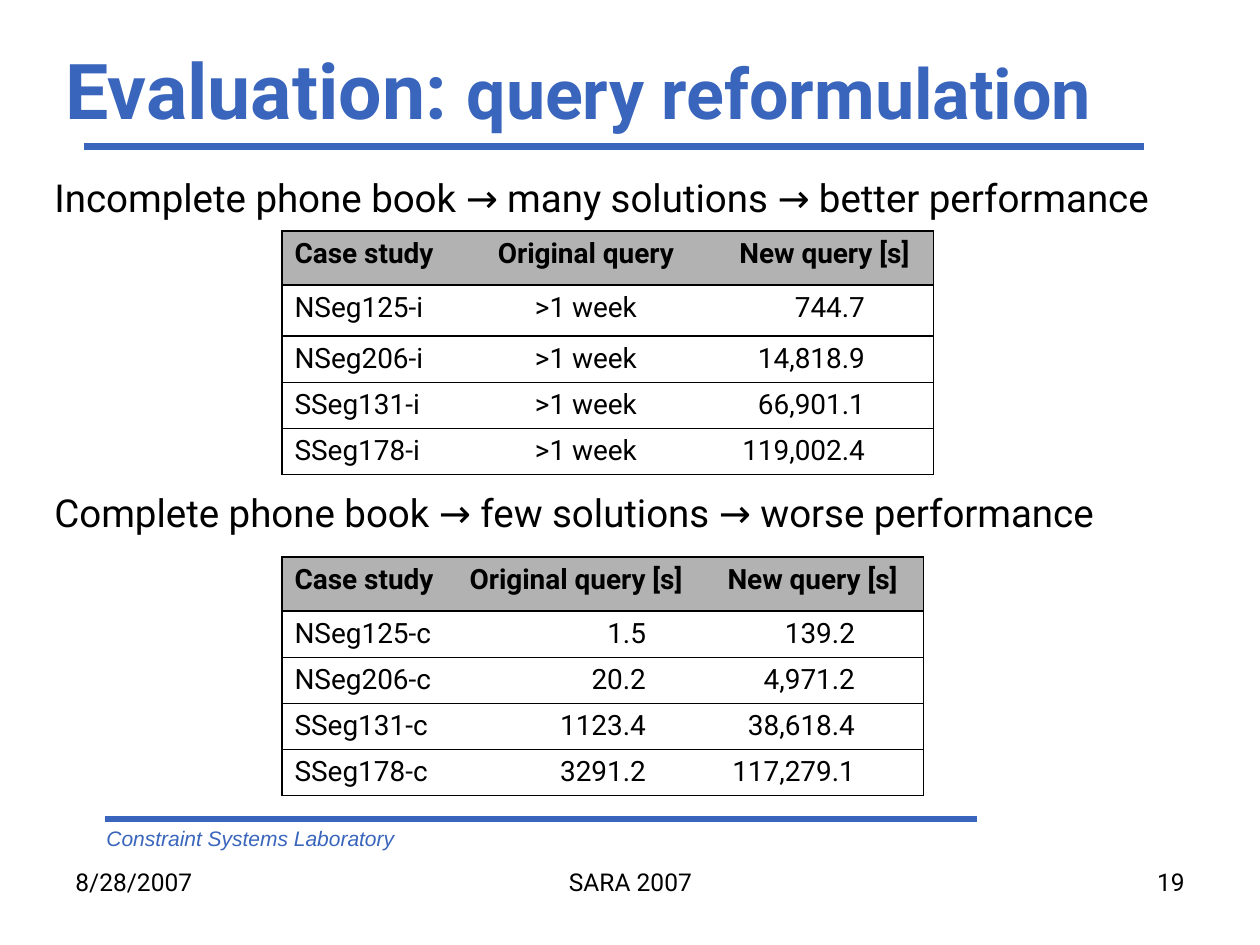
import pptx
import pptx.dml.color
import pptx.enum.shapes
import pptx.enum.text
import pptx.oxml
import pptx.oxml.ns
import pptx.util

PX = 914400 / 126
COLORS = {"blue": "3A65BC", "black": "000000", "header": "B2B2B2"}
ALIGN = {
    "l": pptx.enum.text.PP_ALIGN.LEFT,
    "c": pptx.enum.text.PP_ALIGN.CENTER,
    "r": pptx.enum.text.PP_ALIGN.RIGHT,
}


def px(n):
    return pptx.util.Emu(round(n * PX))


def rgb(name):
    return pptx.dml.color.RGBColor.from_string(COLORS[name])


class SlideBuilder:
    """Draws styled elements on one slide, with lengths in px."""

    def __init__(self, slide, font="Roboto"):
        self.s = slide
        self.font = font

    def style(self, r, size, color="black", bold=False, italic=False, font=None):
        r.font.name = font or self.font
        r.font.size = pptx.util.Pt(size)
        r.font.bold = bold
        r.font.italic = italic
        r.font.color.rgb = rgb(color)

    def rule(self, x1, x2, y):
        sp = self.s.shapes.add_connector(
            pptx.enum.shapes.MSO_CONNECTOR.STRAIGHT, px(x1), px(y), px(x2), px(y))
        sp.line.color.rgb = rgb("blue")
        sp.line.width = pptx.util.Pt(4)
        pptx.oxml.ns.qn("a:effectLst")
        sp._element.spPr.append(pptx.oxml.parse_xml(
            f"<a:effectLst {pptx.oxml.ns.nsdecls('a')}/>"))

    def text(self, box, runs, align="l", wrap=True, middle=False, **look):
        tf = self.s.shapes.add_textbox(*map(px, box)).text_frame
        tf.word_wrap = wrap
        if middle:
            tf.vertical_anchor = pptx.enum.text.MSO_ANCHOR.MIDDLE
        p = tf.paragraphs[0]
        p.alignment = ALIGN[align]
        for content, size in runs:
            r = p.add_run()
            r.text = content
            self.style(r, size, **look)

    def borders(self, cell, sides):
        tc_pr = cell._tc.get_or_add_tcPr()
        for side in "LRTB":
            paint = (f'<a:solidFill><a:srgbClr val="{COLORS["black"]}"/></a:solidFill>'
                     if side in sides else "<a:noFill/>")
            tc_pr.append(pptx.oxml.parse_xml(
                f'<a:ln{side} {pptx.oxml.ns.nsdecls("a")} w="9525">{paint}</a:ln{side}>'))

    def header_fill(self, cell):
        cell.fill.solid()
        cell.fill.fore_color.rgb = rgb("header")
        clr = cell._tc.tcPr.find(".//" + pptx.oxml.ns.qn("a:srgbClr"))
        clr.append(pptx.oxml.parse_xml(
            f'<a:alpha {pptx.oxml.ns.nsdecls("a")} val="50000"/>'))

    def table(self, x, y, widths, heights, rows, header_align, body_align):
        tbl = self.s.shapes.add_table(
            len(rows), len(widths), px(x), px(y), px(sum(widths)), px(sum(heights))).table
        tbl.first_row = tbl.horz_banding = False
        for col, w in zip(tbl.columns, widths):
            col.width = px(w)
        for row, h in zip(tbl.rows, heights):
            row.height = px(h)
        last = len(widths) - 1
        for i, values in enumerate(rows):
            aligns = body_align if i else header_align
            for j, (value, align) in enumerate(zip(values, aligns)):
                cell = tbl.cell(i, j)
                cell.text_frame.text = value
                p = cell.text_frame.paragraphs[0]
                p.alignment = ALIGN[align]
                self.style(p.runs[0], 16, bold=i == 0)
                if align == "r":
                    cell.margin_right = px(69)
                self.borders(cell, "TB" + "L" * (j == 0) + "R" * (j == last))
                if i:
                    cell.fill.background()
                else:
                    self.header_fill(cell)


def main():
    prs = pptx.Presentation()
    prs.slide_width, prs.slide_height = px(1260), px(945)
    b = SlideBuilder(prs.slides.add_slide(prs.slide_layouts[6]))

    b.rule(84, 1144, 147)
    b.rule(105, 977, 819)
    b.text((94, 819, 662, 38), [("Constraint Systems Laboratory", 12)],
           color="blue", italic=True, font="Arial")
    b.text((53, 42, 1164, 94), [("Evaluation: ", 44), ("query reformulation", 40)],
           middle=True, color="blue", bold=True)

    b.table(282, 231, (175, 258, 219), (54, 51, 45, 45, 45), [
        ("Case study", "Original query", "New query [s]"),
        ("NSeg125-i", ">1 week", "744.7"),
        ("NSeg206-i", ">1 week", "14,818.9"),
        ("SSeg131-i", ">1 week", "66,901.1"),
        ("SSeg178-i", ">1 week", "119,002.4"),
    ], "lcc", "lcr")
    b.table(282, 557, (175, 258, 209), (54, 45, 45, 45, 45), [
        ("Case study", "Original query [s]", "New query [s]"),
        ("NSeg125-c", "1.5", "139.2"),
        ("NSeg206-c", "20.2", "4,971.2"),
        ("SSeg131-c", "1123.4", "38,618.4"),
        ("SSeg178-c", "3291.2", "117,279.1"),
    ], "lll", "lrr")

    b.text((42, 168, 1140, 59),
           [("Incomplete phone book → many solutions → better performance", 22)], wrap=False)
    b.text((42, 483, 1085, 59),
           [("Complete phone book → few solutions → worse performance", 22)], wrap=False)

    for x, w, content, align in ((63, 294, "8/28/2007", "l"),
                                 (903, 294, "19", "r"),
                                 (431, 399, "SARA 2007", "c")):
        b.text((x, 861, w, 66), [(content, 14)], align=align)

    prs.save("out.pptx")


if __name__ == "__main__":
    main()
